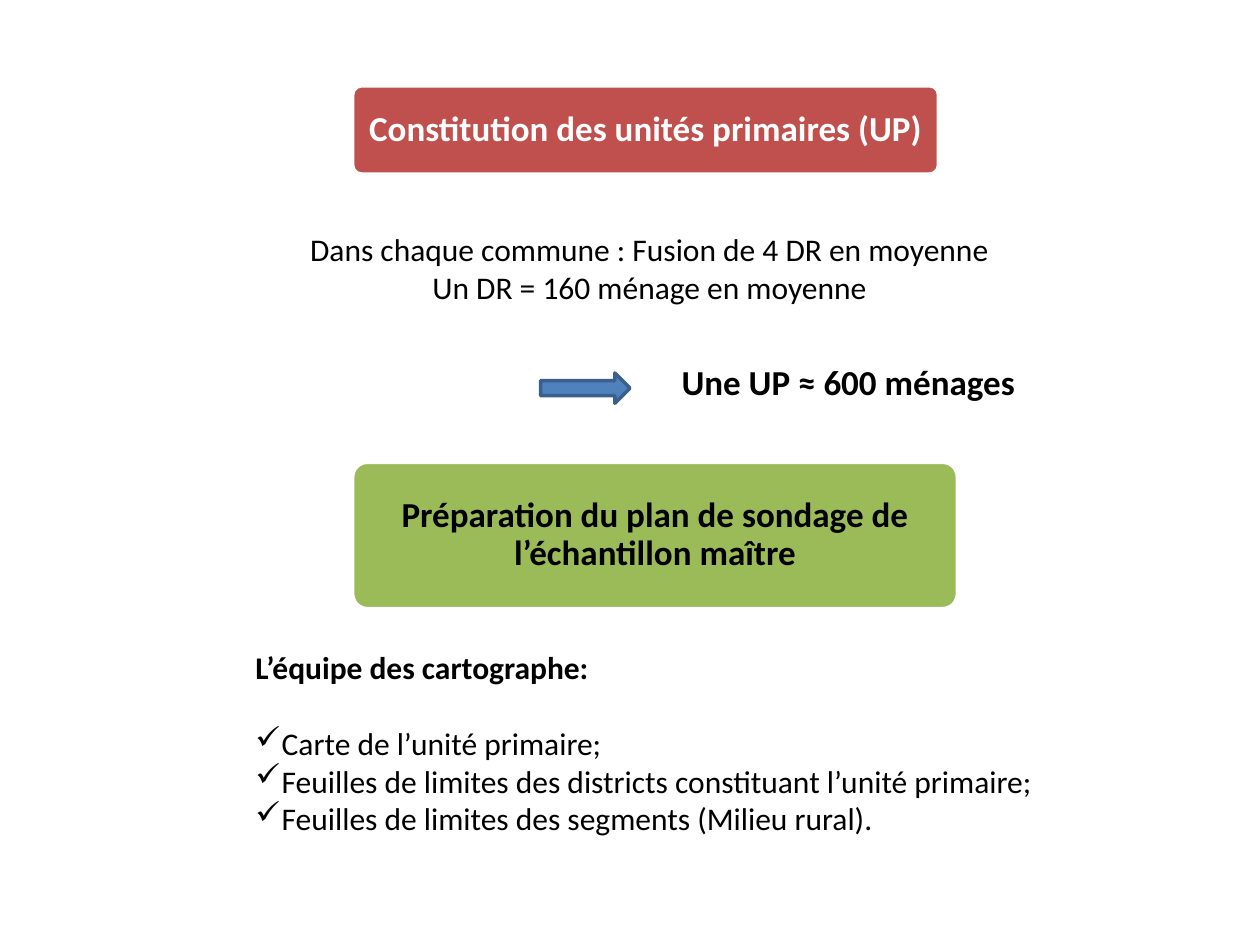
from lxml import etree
from pptx import Presentation
from pptx import util as u
from pptx.dml.color import RGBColor
from pptx.enum import shapes, text
from pptx.oxml import ns

COLORS = {
    "red": "C0504D", "green": "9BBB59", "blue": "4F81BD",
    "navy": "3A5F8C", "white": "FFFFFF", "black": "000000",
}
FONT = "Calibri"


def rgb(name):
    """Return the named palette colour."""
    return RGBColor.from_string(COLORS[name])


def write(tf, content, size=18, bold=False, color="black", align=text.PP_ALIGN.LEFT,
          spacing=1.0, after=0, bullet=None):
    """Add one formatted paragraph to a text frame and return it."""
    p = tf.paragraphs[0] if not tf.text else tf.add_paragraph()
    p.alignment, p.line_spacing, p.space_after = align, spacing, u.Pt(after)
    r = p.add_run()
    r.text = content
    r.font.name, r.font.size, r.font.bold = FONT, u.Pt(size), bold
    r.font.color.rgb = rgb(color)
    if bullet:
        pPr = p._p.get_or_add_pPr()
        indent = u.Cm(0.53)
        pPr.set("marL", str(indent))
        pPr.set("indent", str(-indent))
        etree.SubElement(pPr, ns.qn("a:buChar")).set("char", bullet)
    return p


def add_text(s, left, top, width, height):
    """Add an empty wrapping text box and return its text frame."""
    tf = s.shapes.add_textbox(u.Cm(left), u.Cm(top), u.Cm(width), u.Cm(height)).text_frame
    tf.word_wrap = True
    return tf


def add_block(s, kind, box, fill, line):
    """Add a flat filled shape with a two-point outline."""
    sp = s.shapes.add_shape(kind, *(u.Cm(v) for v in box))
    sp.shadow.inherit = False
    sp.fill.solid()
    sp.fill.fore_color.rgb = rgb(fill)
    sp.line.color.rgb = rgb(line)
    sp.line.width = u.Pt(2)
    return sp


def add_banner(s, box, content, fill, color):
    """Place a rounded step heading in the given box."""
    sp = add_block(s, shapes.MSO_SHAPE.ROUNDED_RECTANGLE, box, fill, "white")
    sp.adjustments[0] = 0.1
    tf = sp.text_frame
    tf.word_wrap = True
    tf.vertical_anchor = text.MSO_ANCHOR.MIDDLE
    tf.margin_left = tf.margin_right = tf.margin_top = tf.margin_bottom = u.Cm(0.18)
    write(tf, content, size=20, bold=True, color=color,
          align=text.PP_ALIGN.CENTER, spacing=0.9)


def add_merge_rule(s, left, top, width, height):
    """Place the centred lines on merging districts and the resulting unit size."""
    tf = add_text(s, left, top, width, 2.57)
    for content in ("Dans chaque commune : Fusion de 4 DR en moyenne",
                    "Un DR = 160 ménage en moyenne"):
        write(tf, content, align=text.PP_ALIGN.CENTER)
    arrow = (left + 5.07, top + 3, 1.8, 0.61)
    add_block(s, shapes.MSO_SHAPE.RIGHT_ARROW, arrow, "blue", "navy")
    tf = add_text(s, left + 7.66, top + height - 1.12, 7.44, 1.12)
    write(tf, "Une UP ≈ 600 ménages", size=20, bold=True)


def add_team(s, left, top, width, height):
    """Place the cartographers' heading and checklist."""
    tf = add_text(s, left, top, width, height)
    write(tf, "L’équipe des cartographe:", bold=True, after=22)
    for item in ("Carte de l’unité primaire;",
                 "Feuilles de limites des districts constituant l’unité primaire;",
                 "Feuilles de limites des segments (Milieu rural)."):
        write(tf, item, bullet="✓")


def main():
    """Build the slide and save it."""
    prs = Presentation()
    prs.slide_width, prs.slide_height = u.Cm(25.4), u.Cm(19.05)
    s = prs.slides.add_slide(prs.slide_layouts.get_by_name("Blank"))
    add_banner(s, (7.11, 1.73, 11.81, 1.78),
               "Constitution des unités primaires (UP)", "red", "white")
    add_merge_rule(s, 5.83, 4.52, 14.53, 3.74)
    add_banner(s, (7.11, 9.32, 12.19, 2.95),
               "Préparation du plan de sondage de l’échantillon maître", "green", "black")
    add_team(s, 4.9, 12.93, 16.6, 4.11)
    prs.save("out.pptx")


if __name__ == "__main__":
    main()
